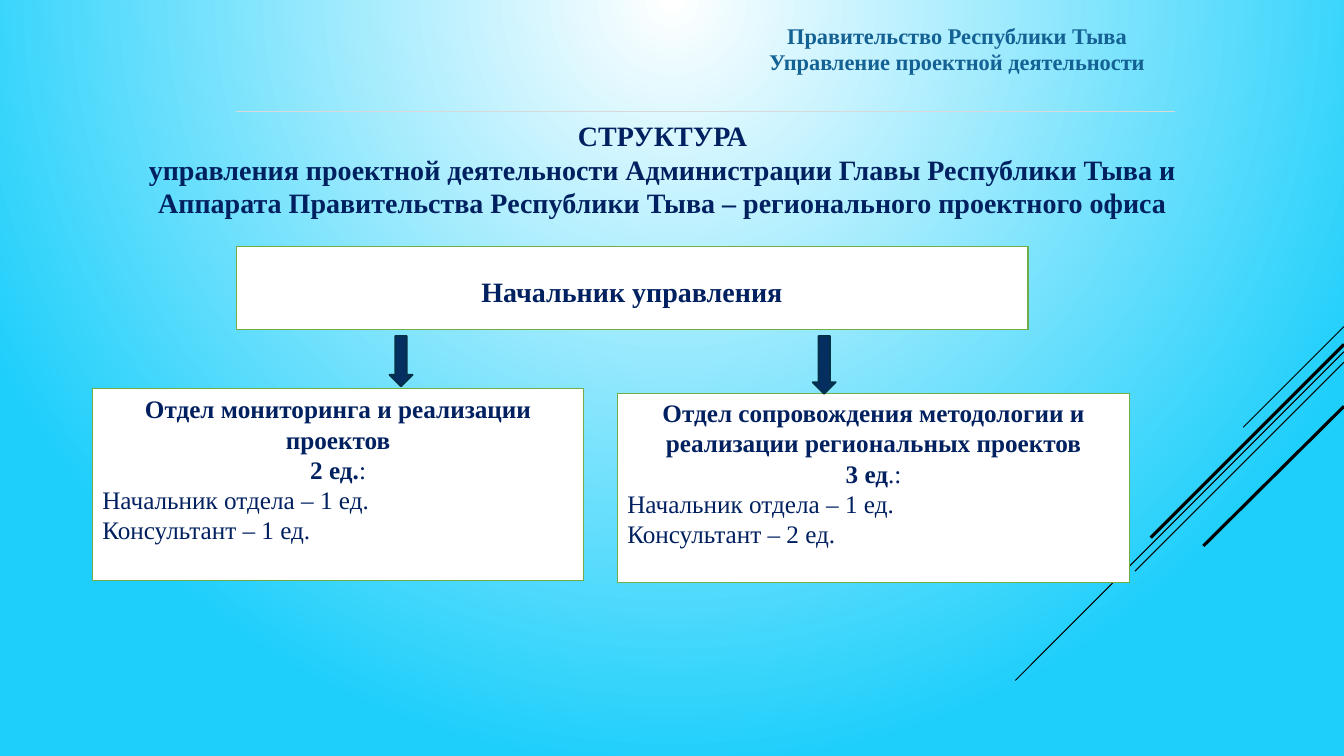
from dataclasses import dataclass

from lxml.etree import SubElement
from pptx import Presentation
from pptx.dml.color import RGBColor
from pptx.enum.shapes import MSO_CONNECTOR as Connector, MSO_SHAPE as Shape
from pptx.enum.text import MSO_ANCHOR as Anchor, MSO_AUTO_SIZE as AutoSize, PP_ALIGN as Align
from pptx.oxml import parse_xml
from pptx.oxml.ns import nsdecls, qn
from pptx.util import Emu, Pt

EMU_PER_PX = 9525
FONT = "Times New Roman"
COLORS = {
    "glow": "FFFFFF",
    "sky": "1ECFFB",
    "stripe": "000000",
    "rule": "D9D9D9",
    "header": "146194",
    "text": "002060",
    "box": "FFFFFF",
    "border": "70AD47",
    "arrow": "052F61",
    "arrow_edge": "043148",
}


@dataclass(frozen=True)
class Line:
    start: tuple[int, int]
    end: tuple[int, int]
    width: float
    color: str = "stripe"


@dataclass(frozen=True)
class Run:
    text: str
    bold: bool = True


@dataclass(frozen=True)
class Paragraph:
    runs: tuple[Run, ...]
    align: Align = Align.CENTER


@dataclass(frozen=True)
class Box:
    frame: tuple[int, int, int, int]
    size: int
    paragraphs: tuple[Paragraph, ...]
    top_inset: int = 5
    bottom_inset: int = 5


def heading(text: str) -> Paragraph:
    return Paragraph((Run(text),))


def count(number: str, suffix: str) -> Paragraph:
    return Paragraph((Run(number), Run(suffix, False)))


def position(text: str) -> Paragraph:
    return Paragraph((Run(text, False),), Align.LEFT)


LINES = (
    Line((1280, 311), (1184, 407), 0.75),
    Line((1280, 335), (967, 648), 0.75),
    Line((1280, 345), (1081, 544), 0.75),
    Line((1280, 328), (1096, 512), 2.25),
    Line((1280, 387), (1146, 520), 2.25),
    Line((225, 106), (1119, 106), 1, "rule"),
)
HEADER = (
    heading("Правительство Республики Тыва"),
    heading("Управление проектной деятельности"),
)
TITLE = (
    heading("СТРУКТУРА"),
    heading("управления проектной деятельности Администрации Главы Республики Тыва и "
            "Аппарата Правительства Республики Тыва – регионального проектного офиса"),
)
BOXES = (
    Box((588, 375, 488, 180), 18, (
        heading("Отдел сопровождения методологии и реализации региональных проектов"),
        count("3 ед", ".:"),
        position("Начальник отдела – 1 ед."),
        position("Консультант – 2 ед."),
    ), bottom_inset=34),
    Box((88, 370, 468, 183), 18, (
        heading("Отдел мониторинга и реализации проектов"),
        count("2 ед.", ":"),
        position("Начальник отдела – 1 ед."),
        position("Консультант – 1 ед."),
    ), bottom_inset=34),
    Box((225, 235, 754, 79), 20, (heading("Начальник управления"),), top_inset=11),
)
ARROWS = ((774, 320, 22, 55), (371, 320, 22, 48))


def px(value: int) -> Emu:
    return Emu(value * EMU_PER_PX)


def rgb(name: str) -> RGBColor:
    return RGBColor.from_string(COLORS[name])


def paint_background(slide) -> None:
    background = parse_xml(
        f'<p:bg {nsdecls("p", "a")}><p:bgPr><a:gradFill rotWithShape="1"><a:gsLst>'
        f'<a:gs pos="0"><a:srgbClr val="{COLORS["glow"]}"/></a:gs>'
        f'<a:gs pos="100000"><a:srgbClr val="{COLORS["sky"]}"/></a:gs></a:gsLst>'
        '<a:path path="circle"><a:fillToRect b="100000"/></a:path>'
        '</a:gradFill><a:effectLst/></p:bgPr></p:bg>'
    )
    slide.element.cSld.insert(0, background)


def write(frame, paragraphs: tuple[Paragraph, ...], size: int, color: str) -> None:
    frame.word_wrap = True
    frame.auto_size = AutoSize.NONE
    for index, content in enumerate(paragraphs):
        paragraph = frame.add_paragraph() if index else frame.paragraphs[0]
        paragraph.alignment = content.align
        for part in content.runs:
            run = paragraph.add_run()
            run.text = part.text
            run.font.name = FONT
            run.font.size = Pt(size)
            run.font.bold = part.bold
            run.font.color.rgb = rgb(color)


def draw_line(slide, line: Line) -> None:
    connector = slide.shapes.add_connector(
        Connector.STRAIGHT, *map(px, line.start + line.end))
    connector.line.color.rgb = rgb(line.color)
    connector.line.width = Pt(line.width)
    SubElement(connector.element.spPr, qn("a:effectLst"))


def draw_shape(slide, kind: Shape, frame: tuple[int, int, int, int],
               fill: str, edge: str, width: float):
    shape = slide.shapes.add_shape(kind, *map(px, frame))
    shape.shadow.inherit = False
    shape.fill.solid()
    shape.fill.fore_color.rgb = rgb(fill)
    shape.line.color.rgb = rgb(edge)
    shape.line.width = Pt(width)
    return shape


def draw_box(slide, box: Box) -> None:
    shape = draw_shape(slide, Shape.RECTANGLE, box.frame, "box", "border", 1)
    frame = shape.text_frame
    frame.vertical_anchor = Anchor.MIDDLE
    frame.margin_top = px(box.top_inset)
    frame.margin_bottom = px(box.bottom_inset)
    write(frame, box.paragraphs, box.size, "text")


def main() -> None:
    presentation = Presentation()
    presentation.slide_width, presentation.slide_height = px(1280), px(720)
    slide = presentation.slides.add_slide(presentation.slide_layouts[5])
    paint_background(slide)
    for line in LINES:
        draw_line(slide, line)

    header = slide.shapes.add_textbox(*map(px, (690, 16, 443, 61)))
    write(header.text_frame, HEADER, 16, "header")

    title = slide.shapes.title
    title.left, title.top, title.width, title.height = map(px, (88, 108, 1086, 134))
    title.text_frame.vertical_anchor = Anchor.TOP
    write(title.text_frame, TITLE, 20, "text")

    for box in BOXES:
        draw_box(slide, box)
    for arrow in ARROWS:
        draw_shape(slide, Shape.DOWN_ARROW, arrow, "arrow", "arrow_edge", 1.25)
    presentation.save("out.pptx")


if __name__ == "__main__":
    main()
